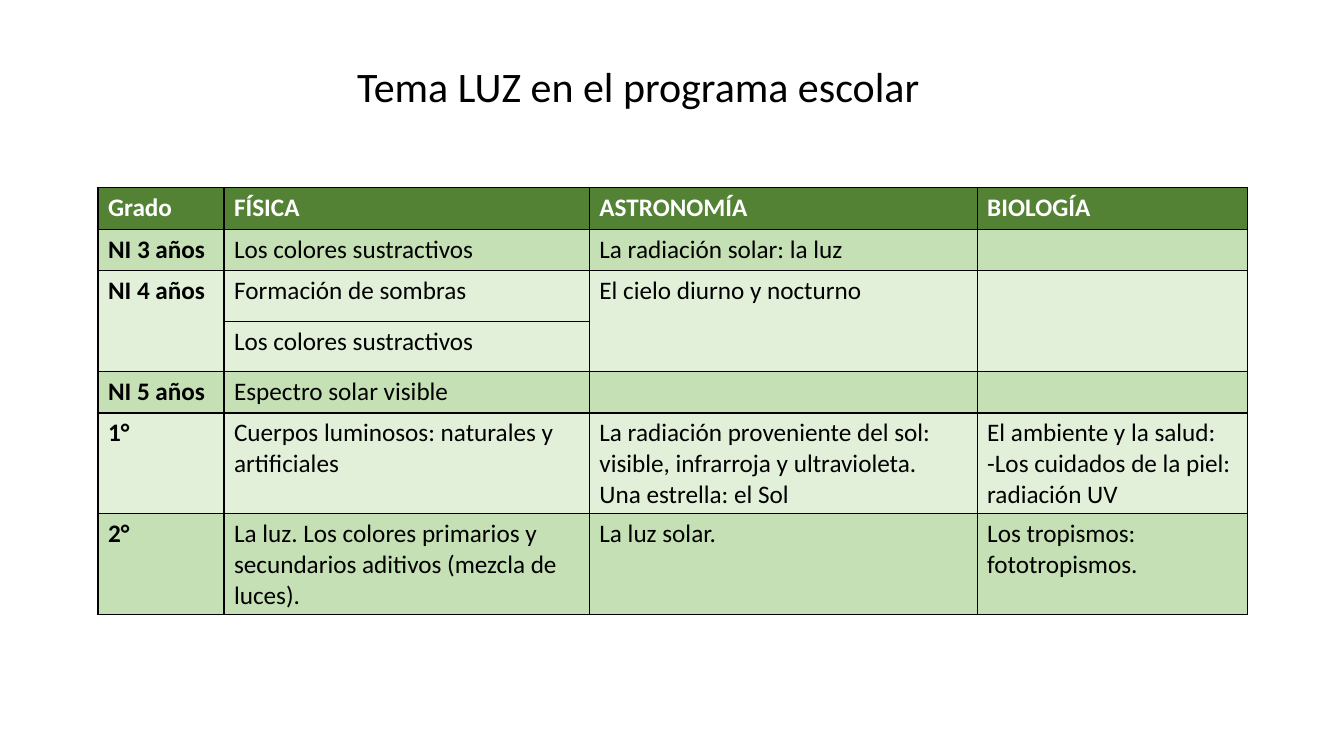
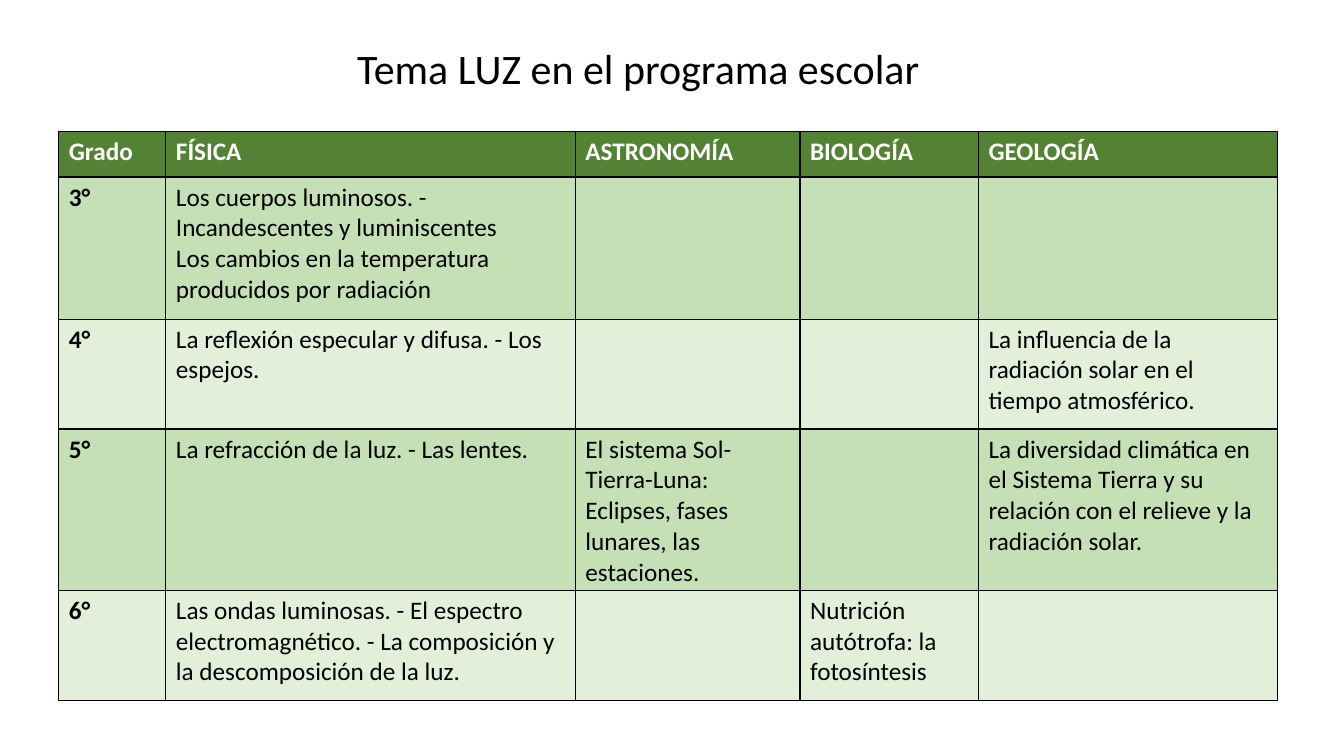
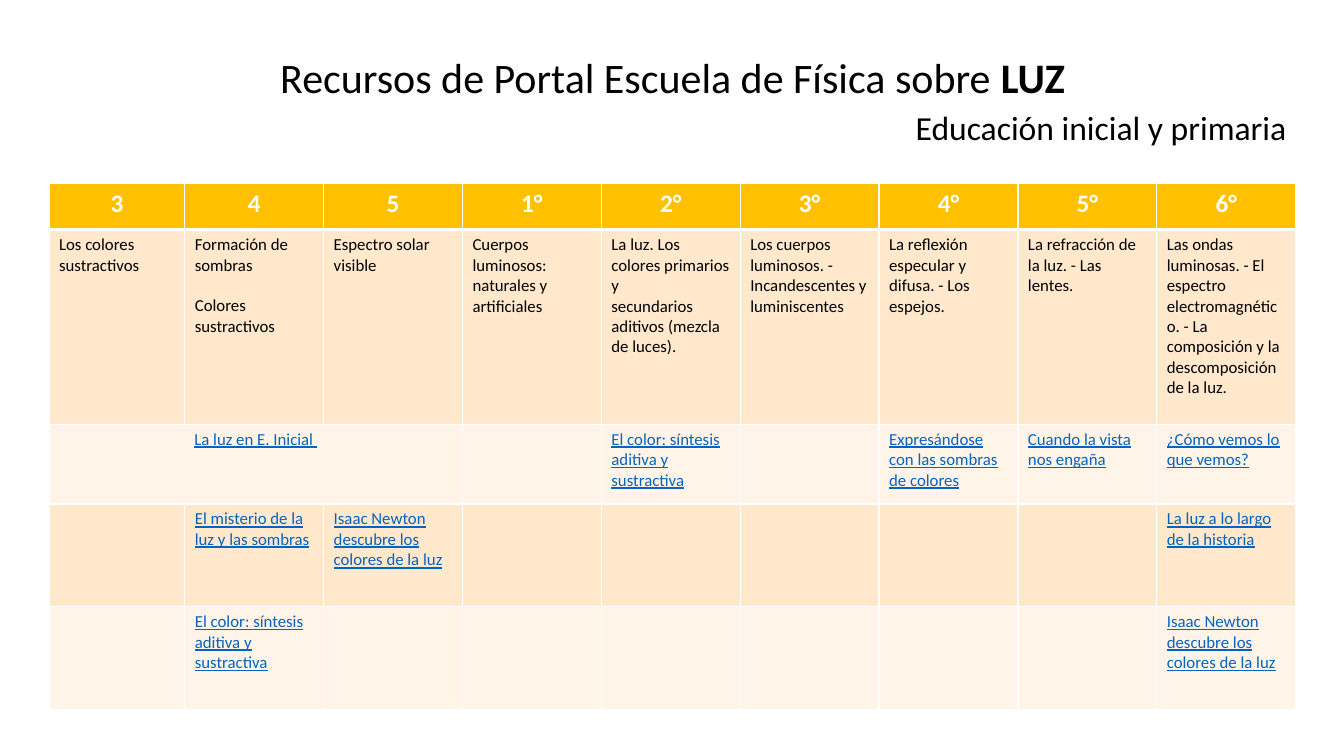
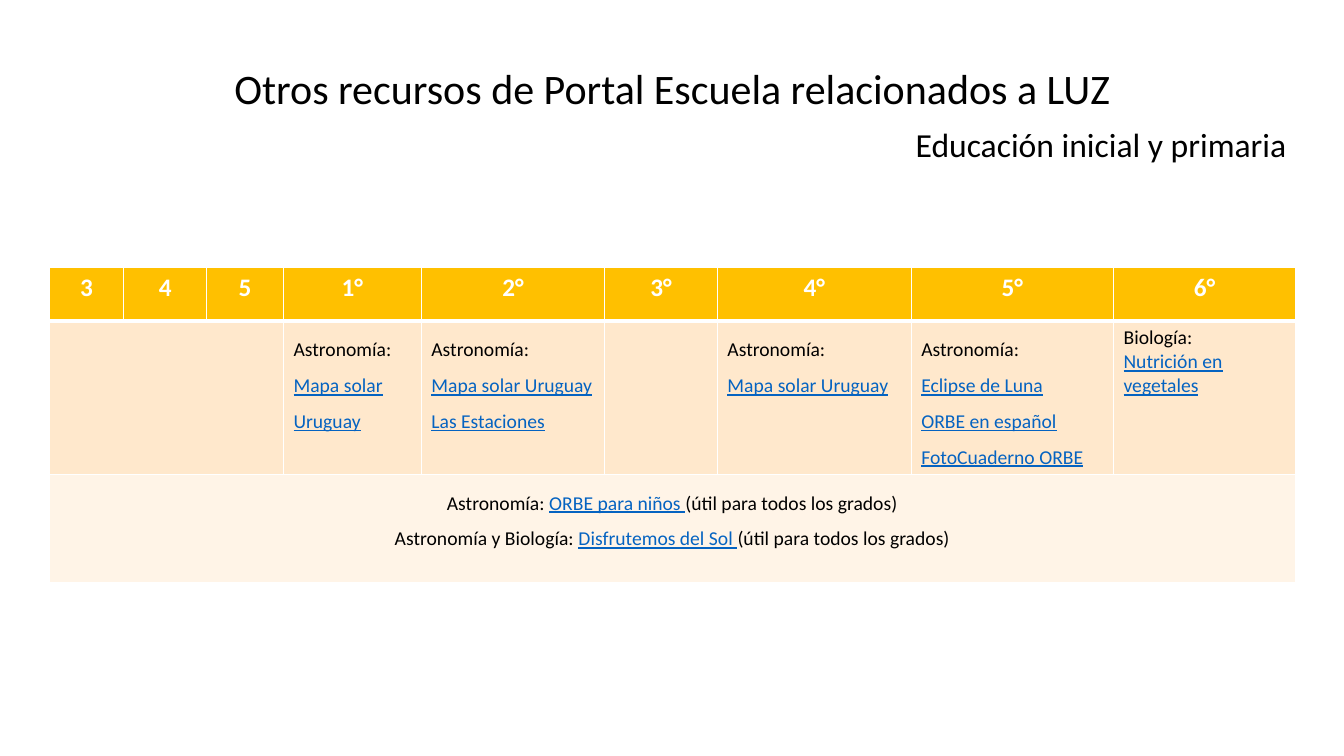
from dataclasses import dataclass
from lxml.etree import SubElement
from pptx import Presentation
from pptx.dml.color import RGBColor
from pptx.enum.text import PP_ALIGN
from pptx.oxml import parse_xml
from pptx.oxml.ns import nsdecls, qn
from pptx.util import Pt

BLACK = RGBColor(0x00, 0x00, 0x00)
WHITE = RGBColor(0xFF, 0xFF, 0xFF)
LINK_BLUE = RGBColor(0x05, 0x63, 0xC1)
DARK_GREEN = RGBColor(0x54, 0x82, 0x35)
MID_GREEN = RGBColor(0xC5, 0xE0, 0xB4)
PALE_GREEN = RGBColor(0xE2, 0xF0, 0xD9)
AMBER = RGBColor(0xFF, 0xC0, 0x00)
PEACH = RGBColor(0xFF, 0xE8, 0xCC)
CREAM = RGBColor(0xFF, 0xF4, 0xE7)

FONT = "Calibri"
TITLE = {"name": FONT, "size": Pt(30), "color": BLACK}
SUBTITLE = {"name": FONT, "size": Pt(24), "color": BLACK}
HEADING = {"name": FONT, "size": Pt(18), "color": WHITE, "bold": True}
BODY = {"name": FONT, "color": BLACK, "bold": False}
LINK = {"color": LINK_BLUE, "underline": True}
STRONG = {"bold": True}

SCHOOL_TITLE = "Tema LUZ en el programa escolar"
LEVEL = "Educación inicial y primaria"
GRADES = ["3", "4", "5", "1°", "2°", "3°", "4°", "5°", "6°"]


@dataclass(frozen=True)
class TableTheme:
    """Look shared by tables of one kind."""
    header: RGBColor
    bands: tuple
    border: RGBColor
    header_rule: float
    header_align: PP_ALIGN
    bold_grades: bool


GREEN = TableTheme(DARK_GREEN, (MID_GREEN, PALE_GREEN), BLACK, 1, PP_ALIGN.LEFT, True)
ORANGE = TableTheme(AMBER, (PEACH, CREAM), WHITE, 3, PP_ALIGN.CENTER, False)

PROGRAM_INITIAL = [
    ["Grado", "FÍSICA", "ASTRONOMÍA", "BIOLOGÍA"],
    ["NI 3 años", "Los colores sustractivos", "La radiación solar: la luz", ""],
    ["NI 4 años", "Formación de sombras", "El cielo diurno y nocturno", ""],
    ["", "Los colores sustractivos", "", ""],
    ["NI 5 años", "Espectro solar visible", "", ""],
    ["1°", "Cuerpos luminosos: naturales y artificiales",
     "La radiación proveniente del sol: visible, infrarroja y ultravioleta.\nUna estrella: el Sol",
     "El ambiente y la salud:\n-Los cuidados de la piel: radiación UV"],
    ["2°", "La luz. Los colores primarios y\nsecundarios aditivos (mezcla de luces).",
     "La luz solar.", "Los tropismos: fototropismos."],
]

PROGRAM_PRIMARY = [
    ["Grado", "FÍSICA", "ASTRONOMÍA", "BIOLOGÍA", "GEOLOGÍA"],
    ["3°", "Los cuerpos luminosos. - Incandescentes y luminiscentes\n"
     "Los cambios en la temperatura producidos por radiación", "", "", ""],
    ["4°", "La reflexión especular y difusa. - Los espejos.", "", "",
     "La influencia de la radiación solar en el tiempo atmosférico."],
    ["5°", "La refracción de la luz. - Las lentes.",
     "El sistema Sol-Tierra-Luna: Eclipses, fases lunares, las estaciones.", "",
     "La diversidad climática en el Sistema Tierra y su relación con el relieve y la radiación solar."],
    ["6°", "Las ondas luminosas. - El espectro electromagnético. - La composición y "
     "la descomposición de la luz.", "", "Nutrición autótrofa: la fotosíntesis", ""],
]

PHYSICS_RESOURCES = [
    GRADES,
    ["Los colores sustractivos", "Formación de sombras\nColores sustractivos",
     "Espectro solar visible", "Cuerpos luminosos: naturales y artificiales",
     "La luz. Los colores primarios y\nsecundarios aditivos (mezcla de luces).",
     "Los cuerpos luminosos. - Incandescentes y luminiscentes",
     "La reflexión especular y difusa. - Los espejos.",
     "La refracción de la luz. - Las lentes.",
     "Las ondas luminosas. - El espectro electromagnético. - La composición y "
     "la descomposición de la luz."],
    ["[La luz en E. Inicial ]", "", "", "", "[El color: síntesis aditiva y sustractiva]", "",
     "[Expresándose con las sombras de colores]", "[Cuando la vista nos engaña]",
     "[¿Cómo vemos lo que vemos?]"],
    ["", "[El misterio de la luz y las sombras]", "[Isaac Newton descubre los colores de la luz]",
     "", "", "", "", "", "[La luz a lo largo de la historia]"],
    ["", "[El color: síntesis aditiva y sustractiva]", "", "", "", "", "", "",
     "[Isaac Newton descubre los colores de la luz]"],
]

OTHER_RESOURCES = [
    GRADES,
    ["", "", "", "Astronomía:\n[Mapa solar Uruguay]",
     "Astronomía:\n[Mapa solar Uruguay]\n[Las Estaciones]", "",
     "Astronomía:\n[Mapa solar Uruguay]",
     "Astronomía:\n[Eclipse de Luna]\n[ORBE en español]\n[FotoCuaderno ORBE]",
     "Biología:\n[Nutrición en vegetales]"],
    ["Astronomía: [ORBE para niños ](útil para todos los grados)\n"
     "Astronomía y Biología: [Disfrutemos del Sol ](útil para todos los grados)"] + [""] * 8,
]


def set_attributes(target, formats):
    """Set each format value on a font, paragraph or table."""
    for name, value in formats.items():
        if name == "color":
            target.color.rgb = value
        else:
            setattr(target, name, value)


def write_text(frame, text, font, paragraph_format, marked=LINK):
    """Write one paragraph per line, with bracketed parts in the marked format."""
    for index, line in enumerate(text.split("\n")):
        paragraph = frame.add_paragraph() if index else frame.paragraphs[0]
        set_attributes(paragraph, paragraph_format)
        for position, part in enumerate(line.replace("]", "[").split("[")):
            if part:
                run = paragraph.add_run()
                run.text = part
                set_attributes(run.font, {**font, **marked} if position % 2 else font)


def add_text(slide, box, text, font, alignment):
    """Place a wrapped text box."""
    shape = slide.shapes.add_textbox(*map(Pt, box))
    shape.text_frame.word_wrap = True
    write_text(shape.text_frame, text, font, {"alignment": alignment}, STRONG)


def set_borders(cell, color, widths):
    """Draw the left, right, top and bottom borders of a cell."""
    properties = cell._tc.get_or_add_tcPr()
    for side, width in zip("LRTB", widths):
        line = parse_xml(f'<a:ln{side} {nsdecls("a")} w="{Pt(width)}"/>')
        fill = SubElement(line, qn("a:solidFill"))
        SubElement(fill, qn("a:srgbClr"), val=str(color))
        properties.append(line)


def add_grid(slide, origin, columns, heights, rows, theme, size,
             spans=(), bands=None, body_format=None, cell_formats=None):
    """Place a filled table with merged cells."""
    box = (*origin, sum(columns), sum(heights))
    table = slide.shapes.add_table(len(rows), len(columns), *map(Pt, box)).table
    set_attributes(table, {"first_row": False, "horz_banding": False})
    for column, width in zip(table.columns, columns):
        column.width = Pt(width)
    for row, height in zip(table.rows, heights):
        row.height = Pt(height)
    for top, left, bottom, right in spans:
        table.cell(top, left).merge(table.cell(bottom, right))
    bands = bands or [index % 2 for index in range(len(rows) - 1)]
    for row_index, texts in enumerate(rows):
        is_header = row_index == 0
        color = theme.header if is_header else theme.bands[bands[row_index - 1]]
        top_width = theme.header_rule if row_index == 1 else 1
        bottom_width = theme.header_rule if is_header else 1
        for column_index, text in enumerate(texts):
            cell = table.cell(row_index, column_index)
            set_borders(cell, theme.border, (1, 1, top_width, bottom_width))
            cell.fill.solid()
            cell.fill.fore_color.rgb = color
            if not text:
                continue
            if is_header:
                write_text(cell.text_frame, text, HEADING, {"alignment": theme.header_align})
                continue
            font = {**BODY, "size": Pt(size), "bold": theme.bold_grades and column_index == 0}
            wide = cell.is_merge_origin and cell.span_width > 1
            paragraph_format = {
                "alignment": PP_ALIGN.CENTER if wide else PP_ALIGN.LEFT,
                **(body_format or {}),
                **(cell_formats or {}).get((row_index, column_index), {}),
            }
            write_text(cell.text_frame, text, font, paragraph_format)


def add_program_slide(presentation, title_top, **grid):
    """Add a slide with the school programme in a green table."""
    slide = presentation.slides.add_slide(presentation.slide_layouts[6])
    add_text(slide, (27, title_top, 858, 44), SCHOOL_TITLE, TITLE, PP_ALIGN.CENTER)
    add_grid(slide, theme=GREEN, size=18, **grid)


def add_resource_slide(presentation, title, title_top, subtitle_top, **grid):
    """Add a slide with resources by grade in an orange table."""
    slide = presentation.slides.add_slide(presentation.slide_layouts[6])
    add_grid(slide, theme=ORANGE, **grid)
    add_text(slide, (51.5, title_top, 858, 44), title, TITLE, PP_ALIGN.CENTER)
    add_text(slide, (68, subtitle_top, 858, 36), LEVEL, SUBTITLE, PP_ALIGN.RIGHT)


def main():
    """Build and save the four slides."""
    presentation = Presentation()
    set_attributes(presentation, {"slide_width": Pt(960), "slide_height": Pt(540)})
    add_program_slide(
        presentation, 39.5, origin=(70, 134), columns=(90, 261, 277, 193),
        heights=(30, 29.5, 36, 36, 29.5, 72, 72), rows=PROGRAM_INITIAL,
        spans=[(2, column, 3, column) for column in (0, 2, 3)], bands=(0, 1, 1, 0, 1, 0))
    add_program_slide(
        presentation, 27, origin=(42, 94), columns=(76.5, 292.5, 160.5, 127.5, 213.5),
        heights=(32.5, 101.5, 78.5, 114, 78.5), rows=PROGRAM_PRIMARY)
    add_resource_slide(
        presentation, "Recursos de Portal Escuela de Física sobre [LUZ]", 33, 73,
        origin=(35, 131), columns=[97] + [99.2] * 8, heights=(33, 139, 57, 73.5, 73.5),
        rows=PHYSICS_RESOURCES, size=12, spans=[(2, 0, 2, 2)],
        cell_formats={(1, 1): {"space_after": Pt(14.6)}})
    add_resource_slide(
        presentation, "Otros recursos de Portal Escuela relacionados a LUZ", 41, 85,
        origin=(35, 191), columns=(53.5, 59, 55, 98.5, 131, 80.5, 138.5, 144.5, 130),
        heights=(38.5, 109.5, 77), rows=OTHER_RESOURCES, size=14,
        spans=[(1, 0, 1, 2), (2, 0, 2, 8)], body_format={"line_spacing": 1.5},
        cell_formats={(1, 8): {"line_spacing": 1.0}})
    presentation.save("out.pptx")


if __name__ == "__main__":
    main()
